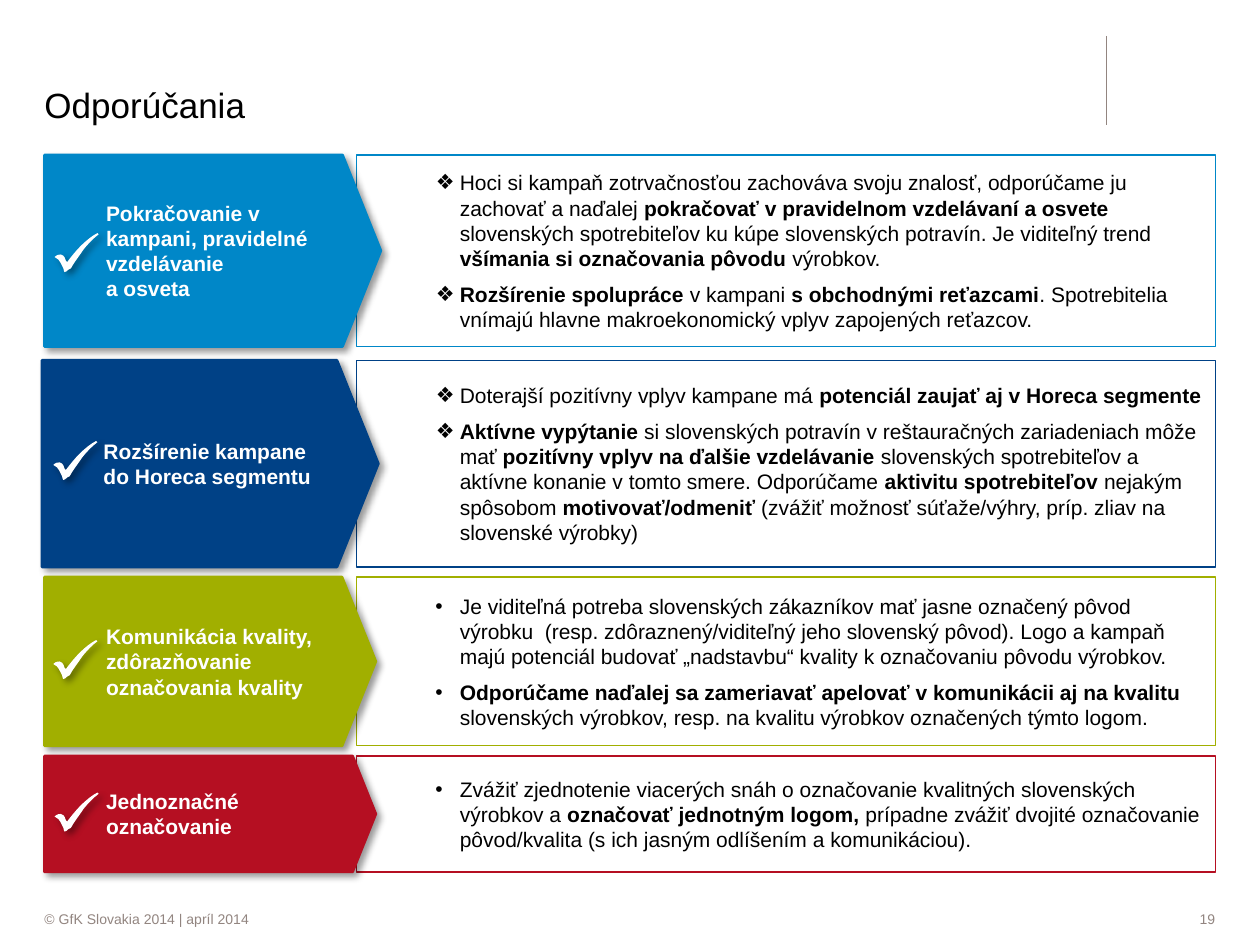
from lxml.etree import Element, SubElement
from pptx import Presentation
from pptx.dml.color import RGBColor
from pptx.enum.shapes import MSO_CONNECTOR, MSO_SHAPE
from pptx.enum.text import MSO_ANCHOR, PP_ALIGN
from pptx.oxml.ns import qn
from pptx.util import Inches, Pt

UNIT = Inches(10) / 100
COLORS = {"blue": "0087C8", "navy": "004186", "green": "A1AF00", "red": "B50F22",
          "white": "FFFFFF", "black": "000000", "gray": "928580"}
PLATE_INSETS = (1, 0.5, 1, 0.5)
PANEL_INSETS = (4.3, 0.5, 1, 0.5)
CHECK_START = (3.4, 0)
CHECK_CURVES = [
    ((3.5, 0.1), (3.5, 0.1), (3.5, 0.1)), ((3.1, 0.4), (2.7, 0.8), (2.3, 1.3)),
    ((1.9, 1.9), (1.5, 2.4), (1.3, 2.8)), ((1.1, 2.9), (1.1, 2.9), (1.1, 2.9)),
    ((1.0, 3.0), (0.9, 3.1), (0.8, 3.1)), ((0.8, 3.1), (0.7, 3.0), (0.7, 2.8)),
    ((0.6, 2.6), (0.6, 2.6), (0.6, 2.6)), ((0.5, 2.4), (0.4, 2.2), (0.3, 2.1)),
    ((0.2, 2.0), (0.1, 2.0), (0, 1.9)), ((0.2, 1.7), (0.4, 1.7), (0.5, 1.7)),
    ((0.6, 1.7), (0.8, 1.8), (0.9, 2.2)), ((1.0, 2.3), (1.0, 2.3), (1.0, 2.3)),
    ((1.3, 1.9), (1.7, 1.4), (2.1, 1.0)), ((2.5, 0.6), (3.0, 0.2), (3.4, 0)),
]
ROWS = [
    {"color": "blue", "plate": (3.53, 12.3, 26.7, 15.2), "check": (0.8, 6.2), "bullet": "❖",
     "label": "Pokračovanie v kampani, pravidelné vzdelávanie \va osveta",
     "points": [
         "Hoci si kampaň zotrvačnosťou zachováva svoju znalosť, odporúčame ju zachovať a naďalej "
         "*pokračovať v pravidelnom vzdelávaní a osvete *slovenských spotrebiteľov ku kúpe "
         "slovenských potravín. Je viditeľný trend *všímania si označovania pôvodu *výrobkov.",
         "*Rozšírenie spolupráce *v kampani *s obchodnými reťazcami*. Spotrebitelia vnímajú "
         "hlavne makroekonomický vplyv zapojených reťazcov."]},
    {"color": "navy", "plate": (3.33, 28.6, 26.7, 16.4), "check": (0.9, 6.4), "bullet": "❖",
     "label": "Rozšírenie kampane \vdo Horeca segmentu",
     "points": [
         "Doterajší pozitívny vplyv kampane má *potenciál zaujať aj v Horeca segmente",
         "*Aktívne vypýtanie *si slovenských potravín v reštauračných zariadeniach môže mať "
         "*pozitívny vplyv na ďalšie vzdelávanie *slovenských spotrebiteľov a aktívne konanie "
         "v tomto smere. Odporúčame *aktivitu spotrebiteľov *nejakým spôsobom "
         "*motivovať/odmeniť* (zvážiť možnosť súťaže/výhry, príp. zliav na slovenské výrobky)"]},
    {"color": "green", "plate": (3.53, 45.8, 26.3, 13.4), "check": (0.7, 5), "bullet": "•",
     "label": "Komunikácia kvality, zdôrazňovanie označovania kvality",
     "points": [
         "Je viditeľná potreba slovenských zákazníkov mať jasne označený pôvod výrobku  (resp. "
         "zdôraznený/viditeľný jeho slovenský pôvod). Logo a kampaň majú potenciál budovať "
         "„nadstavbu“ kvality k označovaniu pôvodu výrobkov.",
         "*Odporúčame naďalej sa zameriavať apelovať v komunikácii aj na kvalitu *slovenských "
         "výrobkov, resp. na kvalitu výrobkov označených týmto logom."]},
    {"color": "red", "plate": (3.53, 60, 26.3, 9.2), "check": (0.8, 2.9), "bullet": "•",
     "label": "Jednoznačné\noznačovanie",
     "points": [
         "Zvážiť zjednotenie viacerých snáh o označovanie kvalitných slovenských výrobkov a "
         "*označovať jednotným logom, *prípadne zvážiť dvojité označovanie pôvod/kvalita "
         "(s ich jasným odlíšením a komunikáciou)."]},
]


def grid(*values):
    """Turn grid units into lengths."""
    return [round(v * UNIT) for v in values]


def rgb(name):
    """Return a named colour."""
    return RGBColor.from_string(COLORS[name])


def style(obj, values):
    """Set attributes from a dict of format values."""
    for name, value in values.items():
        setattr(obj, name, value)


def set_frame(sp, insets, anchor=MSO_ANCHOR.MIDDLE):
    """Prepare the text frame of a shape."""
    tf = sp.text_frame
    names = ("margin_left", "margin_top", "margin_right", "margin_bottom")
    style(tf, {"word_wrap": True, "vertical_anchor": anchor, **dict(zip(names, grid(*insets)))})
    return tf


def set_font(r, color, size, bold=False):
    """Format a run."""
    style(r.font, {"name": "Arial", "size": Pt(size), "bold": bold})
    r.font.color.rgb = rgb(color)


def set_fill(sp, color):
    """Fill a shape with a named colour."""
    sp.fill.solid()
    sp.fill.fore_color.rgb = rgb(color)


def set_indent(p, first=0):
    """Indent a paragraph, with an offset for its first line."""
    pPr = p._p.get_or_add_pPr()
    pPr.set("marL", str(grid(3.9)[0]))
    pPr.set("indent", str(grid(first)[0]))
    return pPr


def add_shadow(sp):
    """Give a shape a soft shadow to the lower right."""
    sp.shadow.inherit = False
    effects = sp._element.spPr.find(qn("a:effectLst"))
    shadow = SubElement(effects, qn("a:outerShdw"), blurRad=str(Pt(4)), dist=str(Pt(3)),
                        dir="2700000", algn="tl", rotWithShape="0")
    color = SubElement(shadow, qn("a:srgbClr"), val=COLORS["black"])
    SubElement(color, qn("a:alpha"), val="40000")


def set_line_text(sp, text, size, color, anchor=MSO_ANCHOR.MIDDLE, align=PP_ALIGN.LEFT):
    """Write a single line of text into a shape."""
    p = set_frame(sp, (0, 0, 0, 0), anchor).paragraphs[0]
    p.text, p.alignment = text, align
    set_font(p.runs[0], color, size)


def add_footer(s, box, text, align):
    """Add a white footer field."""
    sp = s.shapes.add_shape(MSO_SHAPE.RECTANGLE, *grid(*box))
    sp.shadow.inherit = False
    set_fill(sp, "white")
    sp.line.fill.background()
    set_line_text(sp, text, 8, "gray", align=align)


def add_panel(s, box, row):
    """Add the outlined panel with its bullet points."""
    sp = s.shapes.add_shape(MSO_SHAPE.RECTANGLE, *grid(*box))
    sp.shadow.inherit = False
    sp.fill.background()
    sp.line.color.rgb, sp.line.width = rgb(row["color"]), Pt(0.75)
    tf = set_frame(sp, PANEL_INSETS)
    for i, point in enumerate(row["points"]):
        p = tf.add_paragraph() if i else tf.paragraphs[0]
        pPr = set_indent(p, -1.9 if row["bullet"] == "❖" else -1.95)
        SubElement(pPr, qn("a:buFont"), typeface="Arial")
        SubElement(pPr, qn("a:buChar"), char=row["bullet"])
        style(p, {"alignment": PP_ALIGN.LEFT, "space_before": Pt(6 if i else 0)})
        for j, part in enumerate(point.split("*")):
            if part:
                r = p.add_run()
                r.text = part
                set_font(r, "black", 12, j % 2 == 1)


def add_plate(s, box, row):
    """Add the coloured arrow plate with its label."""
    sp = s.shapes.add_shape(MSO_SHAPE.PENTAGON, *grid(*box))
    sp.adjustments[0] = 0.2
    set_fill(sp, row["color"])
    sp.line.color.rgb, sp.line.width = rgb(row["color"]), Pt(1.5)
    add_shadow(sp)
    tf = set_frame(sp, PLATE_INSETS)
    tf.text = row["label"]
    for p in tf.paragraphs:
        set_indent(p)
        p.alignment = PP_ALIGN.LEFT
        for r in p.runs:
            set_font(r, "white", 12, True)


def add_check(s, left, top):
    """Add a white tick drawn with cubic curves."""
    scaled = [[(round(x * 1000), round(y * 1000)) for x, y in curve] for curve in CHECK_CURVES]
    fb = s.shapes.build_freeform(CHECK_START[0] * 1000, CHECK_START[1] * 1000, scale=UNIT / 1000)
    fb.add_line_segments([end for _, _, end in scaled], close=True)
    sp = fb.convert_to_shape(*grid(left, top))
    segments = list(sp._element.spPr.iter(qn("a:lnTo")))
    for segment, (a, b, _) in zip(segments, scaled):
        segment.tag = qn("a:cubicBezTo")
        for i, (x, y) in enumerate((a, b)):
            segment.insert(i, Element(qn("a:pt"), x=str(x), y=str(y)))
    set_fill(sp, "white")
    sp.line.fill.background()
    add_shadow(sp)


def add_row(s, row):
    """Add one recommendation: panel, plate and tick."""
    left, top, _, height = row["plate"]
    dx, dy = row["check"]
    add_panel(s, (28.3, top, 68.15, height), row)
    add_plate(s, row["plate"], row)
    add_check(s, left + dx, top + dy)


def add_frame(s):
    """Add the header rule, the footer and the title."""
    rule = s.shapes.add_connector(MSO_CONNECTOR.STRAIGHT, *grid(87.8, 2.85, 87.8, 9.9))
    rule.line.color.rgb, rule.line.width = rgb("gray"), Pt(0.75)
    SubElement(rule._element.spPr, qn("a:effectLst"))
    add_footer(s, (3.53, 72.15, 77.2, 1.6), "© GfK Slovakia 2014 | apríl 2014", PP_ALIGN.LEFT)
    add_footer(s, (82.25, 72.15, 14.2, 1.6), "19", PP_ALIGN.RIGHT)
    title = s.shapes.add_textbox(*grid(3.53, 2.85, 69.3, 7.1))
    set_line_text(title, "Odporúčania", 20, "black", MSO_ANCHOR.BOTTOM)


def main():
    """Build the slide and save it."""
    prs = Presentation()
    prs.slide_width, prs.slide_height = grid(100, 75)
    s = prs.slides.add_slide(prs.slide_layouts[6])
    add_frame(s)
    for row in ROWS:
        add_row(s, row)
    prs.save("out.pptx")


if __name__ == "__main__":
    main()
